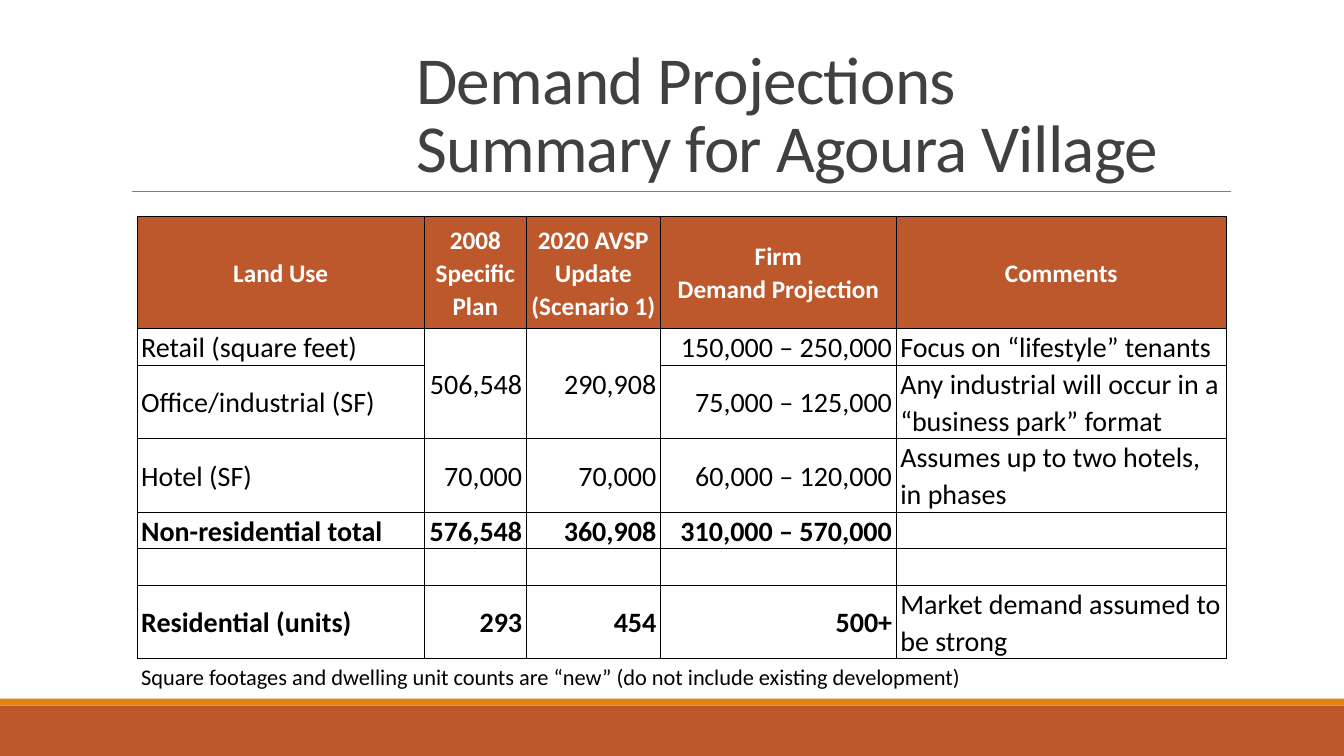
import pptx
import pptx.util
import pptx.dml.color
import pptx.enum.shapes
import pptx.enum.text
import pptx.oxml.ns
from lxml import etree

RGBColor = pptx.dml.color.RGBColor
RUST = RGBColor(0xBD, 0x58, 0x2C)
ORANGE = RGBColor(0xE4, 0x83, 0x12)
CHARCOAL = RGBColor(0x40, 0x40, 0x40)
GRAY = RGBColor(0x80, 0x80, 0x80)
BLACK = RGBColor(0, 0, 0)
WHITE = RGBColor(0xFF, 0xFF, 0xFF)

FONT = "Calibri"
SLIDE_WIDTH = pptx.util.Inches(13.33)
SLIDE_HEIGHT = pptx.util.Inches(7.5)
LEFT = pptx.enum.text.PP_ALIGN.LEFT
CENTER = pptx.enum.text.PP_ALIGN.CENTER
RIGHT = pptx.enum.text.PP_ALIGN.RIGHT
MIDDLE = pptx.enum.text.MSO_ANCHOR.MIDDLE

# Table grid: column widths in percent of the slide, row heights in text lines
COLUMN_SHARES = [21.38, 7.58, 9.98, 17.55, 24.55]
HEADER_SHARE = 14.8
LINE_SHARE = 4.85
ROW_LINES = [1, 2, 2, 1, 1, 2, 1]
COLUMN_ALIGNMENT = [LEFT, RIGHT, RIGHT, RIGHT, LEFT]

HEADINGS = ["Land Use", "2008\nSpecific Plan", "2020 AVSP Update\n(Scenario 1)",
            "Firm\nDemand Projection", "Comments"]
LAND_USES = [
    ["Retail (square feet)", "506,548", "290,908", "150,000 – 250,000",
     "Focus on “lifestyle” tenants"],
    ["Office/industrial (SF)", "", "", "75,000 – 125,000",
     "Any industrial will occur in a “business park” format"],
    ["Hotel (SF)", "70,000", "70,000", "60,000 – 120,000",
     "Assumes up to two hotels, in phases"],
    ["Non-residential total", "576,548", "360,908", "310,000 – 570,000", ""],
    ["", "", "", "", ""],
    ["Residential (units)", "293", "454", "500+",
     "Market demand assumed to be strong"],
]
BOLD_ROWS = (4, 6)
COMMENTS_COLUMN = 4
FOOTNOTE = ("Square footages and dwelling unit counts are “new” "
            "(do not include existing development)")


def across(percent):
    return round(SLIDE_WIDTH * percent / 100)


def down(percent):
    return round(SLIDE_HEIGHT * percent / 100)


def add_span(para, text, size, color, bold=False):
    span = para.add_run()
    span.text = text
    span.font.name = FONT
    span.font.size = pptx.util.Pt(size)
    span.font.bold = bold
    span.font.color.rgb = color
    return span


def add_band(page, top, height, color):
    band = page.shapes.add_shape(pptx.enum.shapes.MSO_SHAPE.RECTANGLE,
                                 0, down(top), SLIDE_WIDTH, down(height))
    band.shadow.inherit = False
    band.fill.solid()
    band.fill.fore_color.rgb = color
    band.line.fill.background()


def add_rule(page, start, end, height):
    rule = page.shapes.add_connector(pptx.enum.shapes.MSO_CONNECTOR.STRAIGHT,
                                     across(start), down(height), across(end), down(height))
    rule.line.color.rgb = GRAY
    rule.line.width = pptx.util.Pt(0.5)
    etree.SubElement(rule._element.spPr, pptx.oxml.ns.qn("a:effectLst"))


def write_title(page, text):
    title = page.shapes.title
    title.left, title.top = across(30.23), down(4.13)
    title.width, title.height = across(61.29), down(21.2)
    frame = title.text_frame
    frame.word_wrap = True
    frame.auto_size = pptx.enum.text.MSO_AUTO_SIZE.NONE
    frame.vertical_anchor = pptx.enum.text.MSO_ANCHOR.BOTTOM
    para = frame.paragraphs[0]
    para.alignment = LEFT
    para.line_spacing = 0.85
    span = add_span(para, text, 48, CHARCOAL)
    span._r.get_or_add_rPr().set("spc", "-50")


def set_borders(cell, visible_sides):
    properties = cell._tc.get_or_add_tcPr()
    for side in "LRTB":
        border = etree.SubElement(properties, pptx.oxml.ns.qn(f"a:ln{side}"),
                                  w=str(pptx.util.Pt(1)))
        if side in visible_sides:
            fill = etree.SubElement(border, pptx.oxml.ns.qn("a:solidFill"))
            etree.SubElement(fill, pptx.oxml.ns.qn("a:srgbClr"), val=str(BLACK))
        else:
            etree.SubElement(border, pptx.oxml.ns.qn("a:noFill"))


def format_cell(cell, fill=None, sides="LRTB"):
    cell.margin_left = cell.margin_right = pptx.util.Inches(0.04)
    cell.margin_top = cell.margin_bottom = 0
    cell.vertical_anchor = MIDDLE
    set_borders(cell, sides)
    if fill is None:
        cell.fill.background()
    else:
        cell.fill.solid()
        cell.fill.fore_color.rgb = fill


def write_cell(cell, text, size, color, bold, alignment):
    frame = cell.text_frame
    for index, line in enumerate(text.split("\n")):
        para = frame.add_paragraph() if index else frame.paragraphs[0]
        para.alignment = alignment
        para.line_spacing = 1.07
        if line:
            add_span(para, line, size, color, bold)


def add_demand_table(page):
    row_shares = [HEADER_SHARE] + [LINE_SHARE * lines for lines in ROW_LINES]
    frame = page.shapes.add_table(len(row_shares), len(COLUMN_SHARES),
                                  across(10.2), down(28.67),
                                  across(sum(COLUMN_SHARES)), down(sum(row_shares)))
    table = frame.table
    table.first_row = table.horz_banding = False
    for column, share in zip(table.columns, COLUMN_SHARES):
        column.width = across(share)
    for row, share in zip(table.rows, row_shares):
        row.height = down(share)

    # Header row
    for column, heading in enumerate(HEADINGS):
        cell = table.cell(0, column)
        format_cell(cell, RUST)
        write_cell(cell, heading, 18, WHITE, True, CENTER)

    # Land use rows
    for row, values in enumerate(LAND_USES, start=1):
        for column, value in enumerate(values):
            cell = table.cell(row, column)
            format_cell(cell)
            bold = row in BOLD_ROWS and column != COMMENTS_COLUMN
            write_cell(cell, value, 20, BLACK, bold, COLUMN_ALIGNMENT[column])
    for column in (1, 2):
        table.cell(1, column).merge(table.cell(2, column))

    # Footnote row
    last_row = len(row_shares) - 1
    for column in range(len(COLUMN_SHARES)):
        format_cell(table.cell(last_row, column), sides="T")
    footnote = table.cell(last_row, 0)
    footnote.merge(table.cell(last_row, len(COLUMN_SHARES) - 1))
    write_cell(footnote, FOOTNOTE, 16, BLACK, False, LEFT)


def main():
    deck = pptx.Presentation()
    deck.slide_width, deck.slide_height = SLIDE_WIDTH, SLIDE_HEIGHT
    page = deck.slides.add_slide(deck.slide_layouts.get_by_name("Title Only"))

    # Footer bands and title rule
    add_band(page, 93.33, 6.67, RUST)
    add_band(page, 92.4, 0.93, ORANGE)
    add_rule(page, 9.83, 91.6, 25.33)

    # Title and table
    write_title(page, "Demand Projections Summary for Agoura Village")
    add_demand_table(page)
    deck.save("out.pptx")


if __name__ == "__main__":
    main()
